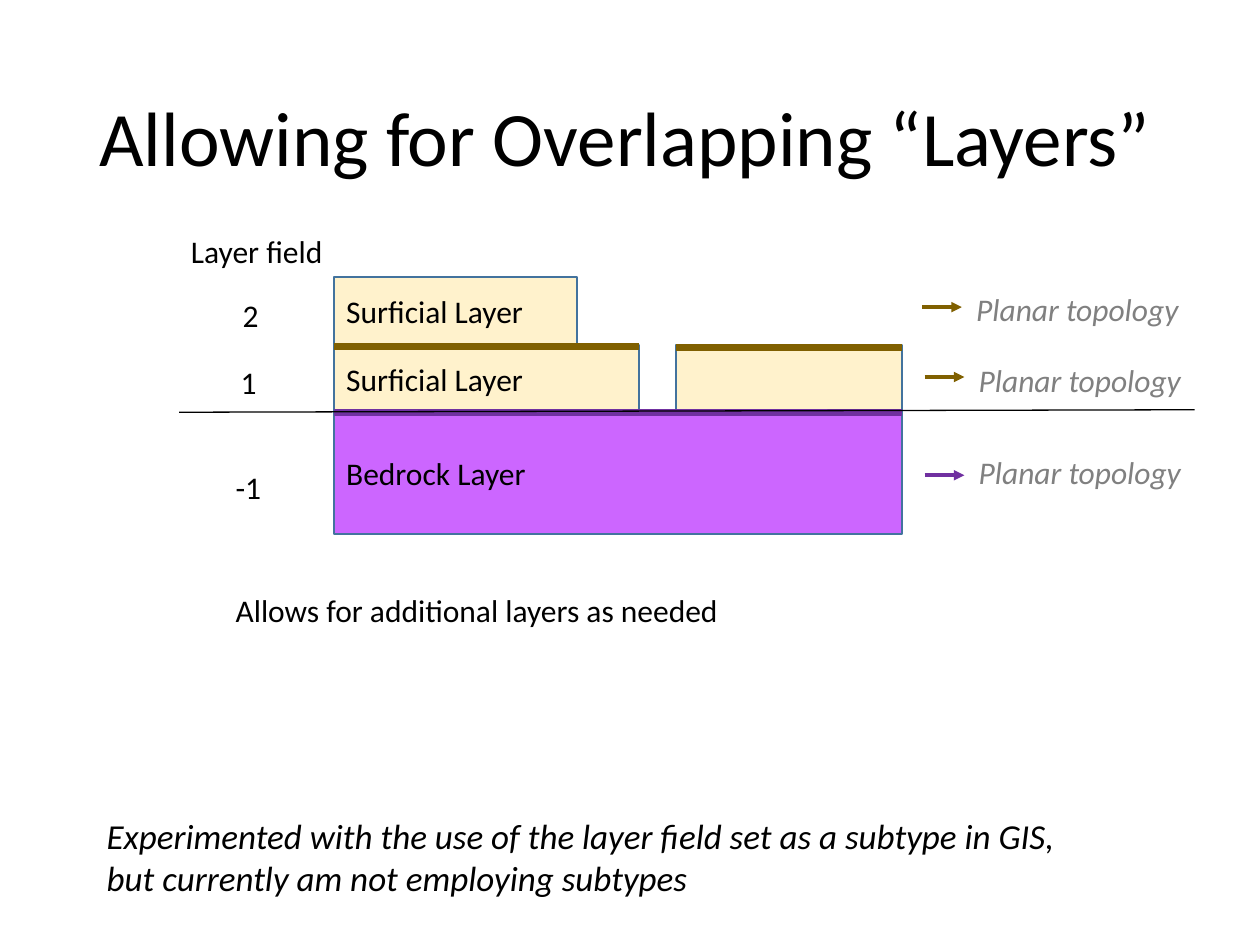
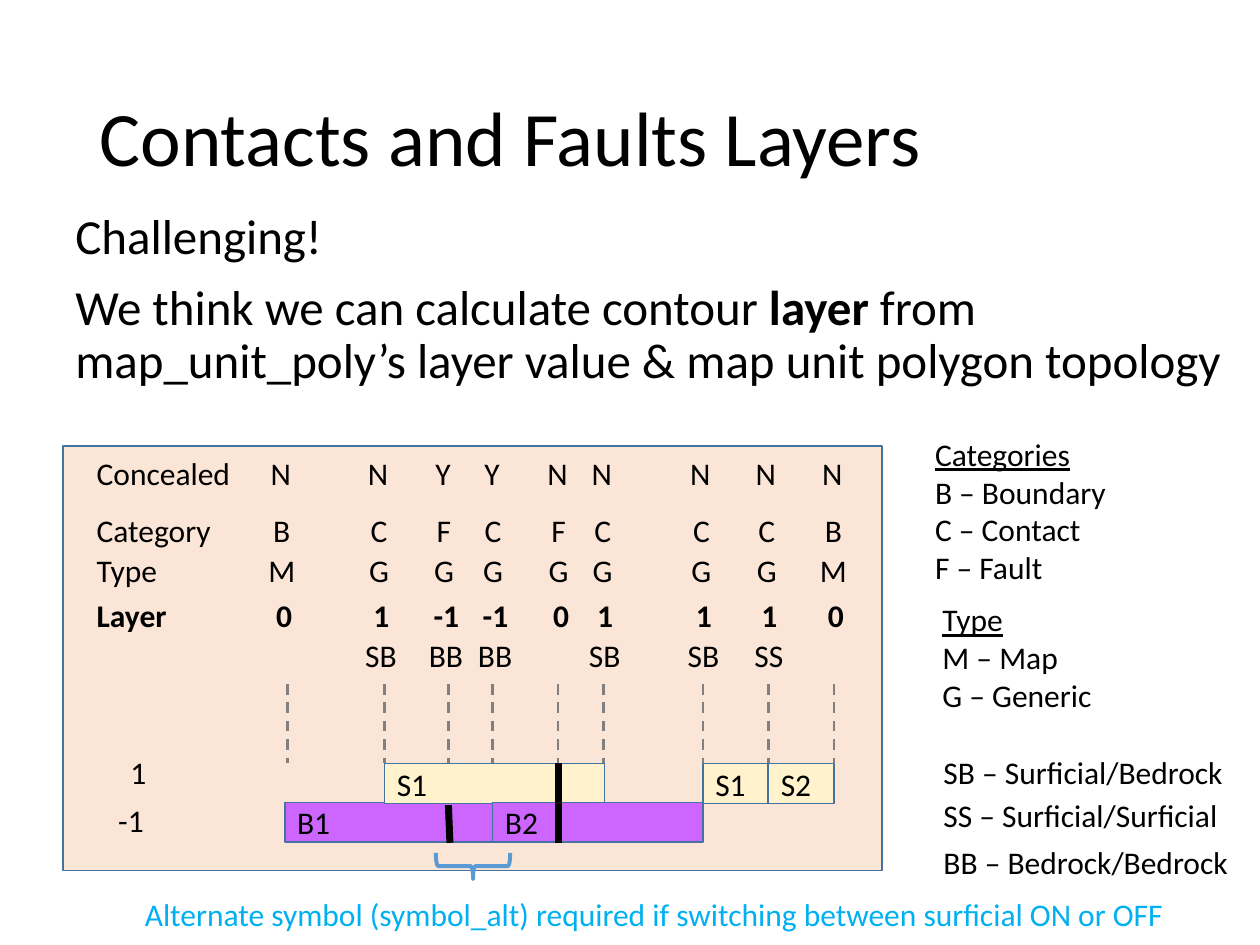
from dataclasses import dataclass

import lxml.etree
import pptx
import pptx.dml.color
import pptx.enum.dml
import pptx.enum.shapes
import pptx.enum.text
import pptx.oxml.ns
import pptx.util
from pptx.util import Cm

FONT = "Calibri"
BLACK = "000000"
GREY = "808080"
OUTLINE = "43739E"
SURFICIAL = "FFF2CC"
BEDROCK = "CC66FF"
BROWN = "806000"
PURPLE = "7030A0"
PANEL = "FBE5D6"
BRACE = "5B9BD5"
NOTE = "00B0F0"

LINE_HEIGHT = 1.02
LEFT = pptx.enum.text.PP_ALIGN.LEFT
CENTER = pptx.enum.text.PP_ALIGN.CENTER
RIGHT = pptx.enum.text.PP_ALIGN.RIGHT
MIDDLE = pptx.enum.text.MSO_ANCHOR.MIDDLE
PRESET = pptx.enum.shapes.MSO_SHAPE


@dataclass
class Block:
    """A filled, outlined rectangle; lengths in centimetres."""
    left: float
    top: float
    width: float
    height: float
    fill: str
    text: str = ""


@dataclass
class Label:
    """A text box; lengths in centimetres."""
    text: str
    left: float
    top: float
    width: float
    height: float = LINE_HEIGHT
    size: int = 18
    color: str = BLACK
    bold: bool = False
    italic: bool = False
    align: int = LEFT
    wrap: bool = False
    underline_first: bool = False


@dataclass
class Line:
    """A straight line; ends in centimetres, weight in points."""
    x1: float
    y1: float
    x2: float
    y2: float
    color: str
    weight: float
    dashed: bool = False
    arrow: bool = False


@dataclass
class AttributeRow:
    """One attribute of the contacts, with a value for every contact."""
    name: str
    top: float
    name_width: float
    value_width: float
    values: str
    shift: float = 0
    bold: bool = False


def rgb(color: str) -> pptx.dml.color.RGBColor:
    return pptx.dml.color.RGBColor.from_string(color)


def format_run(run, size: int, color: str = BLACK, bold: bool = False,
               italic: bool = False) -> None:
    run.font.name = FONT
    run.font.size = pptx.util.Pt(size)
    run.font.color.rgb = rgb(color)
    run.font.bold = bold
    run.font.italic = italic


def draw_label(slide, label: Label) -> None:
    box = slide.shapes.add_textbox(Cm(label.left), Cm(label.top),
                                   Cm(label.width), Cm(label.height))
    text_frame = box.text_frame
    text_frame.text = label.text
    text_frame.word_wrap = label.wrap
    for paragraph in text_frame.paragraphs:
        paragraph.alignment = label.align
        for run in paragraph.runs:
            format_run(run, label.size, label.color, label.bold, label.italic)
    if label.underline_first:
        text_frame.paragraphs[0].runs[0].font.underline = True


def draw_block(slide, block: Block) -> None:
    shape = slide.shapes.add_shape(PRESET.RECTANGLE, Cm(block.left), Cm(block.top),
                                   Cm(block.width), Cm(block.height))
    shape.shadow.inherit = False
    shape.fill.solid()
    shape.fill.fore_color.rgb = rgb(block.fill)
    shape.line.color.rgb = rgb(OUTLINE)
    shape.line.width = pptx.util.Pt(1)
    if block.text:
        shape.text_frame.text = block.text
        shape.text_frame.vertical_anchor = MIDDLE
        paragraph = shape.text_frame.paragraphs[0]
        paragraph.alignment = LEFT
        format_run(paragraph.runs[0], 18)


def draw_line(slide, line: Line) -> None:
    connector = slide.shapes.add_connector(
        pptx.enum.shapes.MSO_CONNECTOR.STRAIGHT,
        Cm(line.x1), Cm(line.y1), Cm(line.x2), Cm(line.y2))
    connector.line.color.rgb = rgb(line.color)
    connector.line.width = pptx.util.Pt(line.weight)
    if line.dashed:
        connector.line.dash_style = pptx.enum.dml.MSO_LINE.DASH
    properties = connector._element.spPr
    if line.arrow:
        outline = properties.find(pptx.oxml.ns.qn("a:ln"))
        lxml.etree.SubElement(outline, pptx.oxml.ns.qn("a:tailEnd"), type="triangle")
    lxml.etree.SubElement(properties, pptx.oxml.ns.qn("a:effectLst"))


def add_titled_slide(presentation, text: str):
    slide = presentation.slides.add_slide(presentation.slide_layouts[5])
    title = slide.shapes.title
    title.left, title.top = Cm(1.75), Cm(1.02)
    title.width, title.height = Cm(21.9), Cm(3.68)
    title.text_frame.text = text
    title.text_frame.auto_size = pptx.enum.text.MSO_AUTO_SIZE.NONE
    title.text_frame.vertical_anchor = MIDDLE
    paragraph = title.text_frame.paragraphs[0]
    paragraph.alignment = LEFT
    paragraph.line_spacing = 0.9
    format_run(paragraph.runs[0], 44)
    return slide


def build_overlap_slide(presentation) -> None:
    slide = add_titled_slide(presentation, "Allowing for Overlapping “Layers”")
    stack_left, stack_right = 6.73, 18.19
    for block in (
        Block(stack_left, 8.28, 11.46, 2.49, BEDROCK, "Bedrock Layer"),
        Block(stack_left, 6.96, 6.15, 1.37, SURFICIAL, "Surficial Layer"),
        Block(13.63, 6.96, 4.55, 1.37, SURFICIAL),
        Block(stack_left, 5.59, 4.9, 1.37, SURFICIAL, "Surficial Layer"),
    ):
        draw_block(slide, block)

    for line in (
        Line(13.63, 7.01, stack_right, 7.01, BROWN, 4),
        Line(stack_left, 8.31, stack_right, 8.31, PURPLE, 4),
        Line(3.61, 8.31, 24.08, 8.26, BLACK, 0.75),
        Line(stack_left, 6.98, 12.88, 6.98, BROWN, 4),
    ):
        draw_line(slide, line)

    for left, top, arrow_y, color in ((19.43, 5.73, 6.19, BROWN),
                                      (19.48, 7.15, 7.6, BROWN),
                                      (19.48, 9.01, 9.58, PURPLE)):
        draw_label(slide, Label("Planar topology", left, top, 4.62,
                                color=GREY, italic=True))
        draw_line(slide, Line(left - 0.84, arrow_y, left - 0.04, arrow_y,
                              color, 2, arrow=True))

    for label in (
        Label("Layer field", 3.6, 4.56, 3.2),
        Label("2", 4.64, 5.84, 0.84),
        Label("1", 4.6, 7.19, 0.84),
        Label("-1", 4.5, 9.32, 1.04),
        Label("Allows for additional layers as needed", 4.5, 11.79, 10.36),
        Label("Experimented with the use of the layer field set as a subtype in GIS, "
              "but currently am not employing subtypes",
              1.9, 16.3, 20.32, 1.96, size=20, italic=True, wrap=True),
    ):
        draw_label(slide, label)


def draw_body(slide) -> None:
    box = slide.shapes.add_textbox(Cm(1.27), Cm(4.16), Cm(23.65), Cm(4.47))
    text_frame = box.text_frame
    text_frame.word_wrap = True
    text_frame.text = "Challenging!"
    paragraph = text_frame.add_paragraph()
    for text in ("We think we can calculate contour ", "layer",
                 " from map_unit_poly’s layer value & map unit polygon topology"):
        paragraph.add_run().text = text
    for paragraph in text_frame.paragraphs:
        paragraph.line_spacing = 0.9
        paragraph.space_before = pptx.util.Pt(10)
        for run in paragraph.runs:
            format_run(run, 28, bold=run.text == "layer")


def draw_attributes(slide) -> None:
    """Write the attribute values above the contact each belongs to."""
    centers = (5.68, 7.64, 8.95, 9.94, 11.26, 12.15, 14.14, 15.46, 16.8)
    for row in (
        AttributeRow("Concealed", 9.02, 3.23, 0.95, "N N Y Y N N N N N", -0.02),
        AttributeRow("Category", 10.17, 2.84, 0.9, "B C F C F C C C B"),
        AttributeRow("Type", 10.98, 1.75, 1.15, "M G G G G G G G M"),
        AttributeRow("Layer", 11.89, 1.93, 1.2, "0 1 -1 -1 0 1 1 1 0", 0.05, True),
        AttributeRow("", 12.7, 0, 1.4, "- SB BB BB - SB SB SS -", 0.04),
    ):
        if row.name:
            draw_label(slide, Label(row.name, 1.7, row.top, row.name_width,
                                    bold=row.bold))
        for center, value in zip(centers, row.values.split()):
            if value != "-":
                draw_label(slide, Label(value, center + row.shift - row.value_width / 2,
                                        row.top, row.value_width, bold=row.bold,
                                        align=CENTER))


def draw_section(slide) -> None:
    """Draw the map units in section, with contacts, faults and the brace."""
    surface_top, bedrock_top, base = 15.39, 16.18, 16.99
    for block in (
        Block(5.74, bedrock_top, 4.19, 0.79, BEDROCK, "B1"),
        Block(7.75, surface_top, 4.44, 0.81, SURFICIAL, "S1"),
        Block(14.17, surface_top, 1.32, 0.81, SURFICIAL, "S1"),
        Block(9.93, bedrock_top, 4.24, 0.79, BEDROCK, "B2"),
        Block(15.49, surface_top, 1.32, 0.81, SURFICIAL, "S2"),
    ):
        draw_block(slide, block)
    draw_line(slide, Line(11.25, surface_top, 11.25, base, BLACK, 4))
    draw_line(slide, Line(9.04, 16.23, 9.07, base, BLACK, 4))
    for x in (5.79, 7.75, 9.04, 9.93, 11.25, 12.17, 14.17, 15.49, 16.81):
        draw_line(slide, Line(x, 13.79, x, surface_top, GREY, 1.5, dashed=True))
    draw_label(slide, Label("1", 2.36, 15.06, 0.84, align=RIGHT))
    draw_label(slide, Label("-1", 2.11, 16.03, 1.04, align=RIGHT))

    brace = slide.shapes.add_shape(PRESET.RIGHT_BRACE, Cm(9.27), Cm(16.71),
                                   Cm(0.53), Cm(1.5))
    brace.rotation = 90
    brace.shadow.inherit = False
    brace.fill.background()
    brace.line.color.rgb = rgb(BRACE)
    brace.line.width = pptx.util.Pt(2.25)


def build_contacts_slide(presentation) -> None:
    slide = add_titled_slide(presentation, "Contacts and Faults Layers")
    draw_body(slide)
    draw_block(slide, Block(1.27, 8.99, 16.51, 8.56, PANEL))
    draw_section(slide)
    draw_attributes(slide)
    for label in (
        Label("Categories\nB – Boundary\nC – Contact\nF – Fault",
              18.6, 8.64, 3.99, 3.33, underline_first=True),
        Label("Type\nM – Map\nG – Generic",
              18.75, 11.98, 3.56, 2.57, underline_first=True),
        Label("SB – Surficial/Bedrock", 18.77, 15.06, 6.2),
        Label("SS – Surficial/Surficial", 18.77, 15.93, 6.15),
        Label("BB – Bedrock/Bedrock", 18.77, 16.87, 6.3),
        Label("Alternate symbol (symbol_alt) required if switching between "
              "surficial ON or OFF", 2.67, 17.92, 22, color=NOTE),
    ):
        draw_label(slide, label)


def main() -> None:
    presentation = pptx.Presentation()
    presentation.slide_width, presentation.slide_height = Cm(25.4), Cm(19.05)
    build_overlap_slide(presentation)
    build_contacts_slide(presentation)
    presentation.save("out.pptx")


if __name__ == "__main__":
    main()
